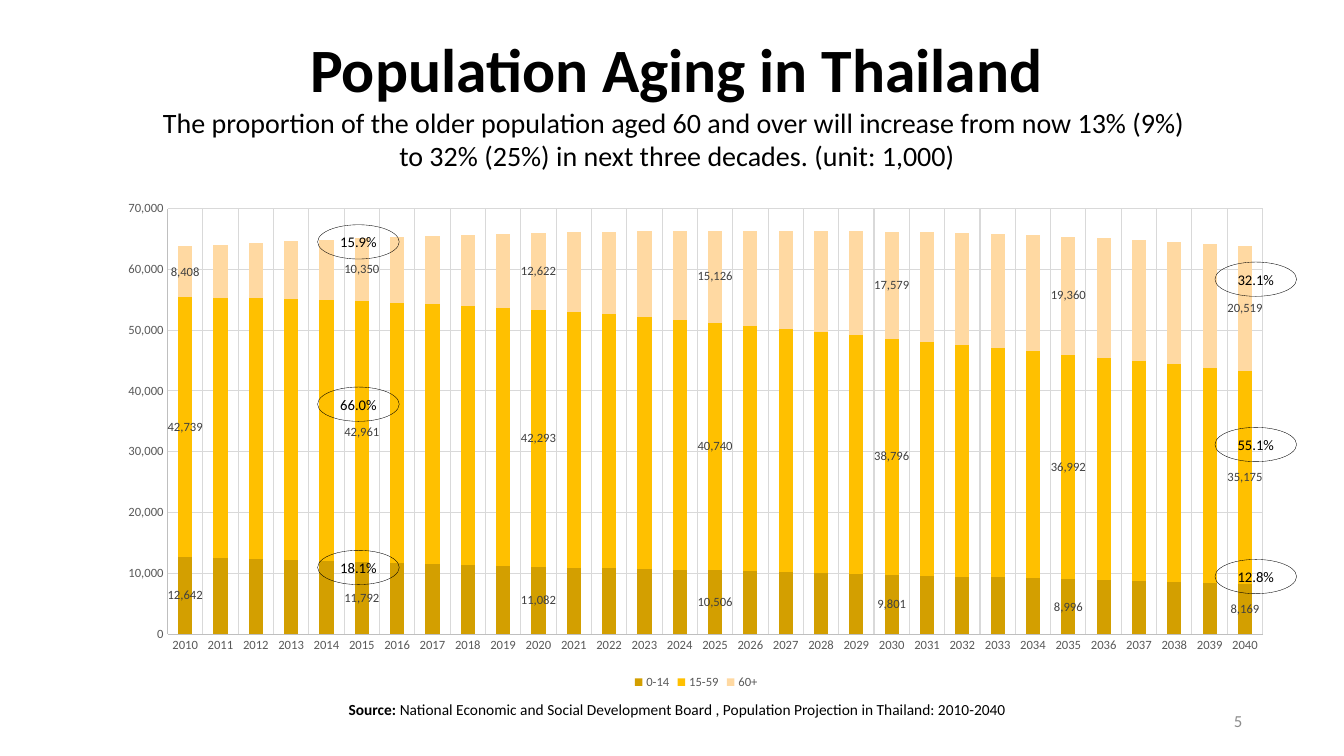
"""Build the slide on population aging in Thailand."""
from dataclasses import dataclass

from lxml import etree
from pptx import Presentation
from pptx import util as u
from pptx.chart.data import CategoryChartData
from pptx.dml.color import RGBColor
from pptx.enum import chart as ch, shapes, text


@dataclass(frozen=True)
class Theme:
    font: str = "Calibri"
    black: str = "000000"
    label: str = "404040"
    axis: str = "595959"
    page: str = "8C8C8C"
    line: str = "BFBFBF"
    grid: str = "D9D9D9"
    young: str = "D39F00"
    adult: str = "FFC000"
    older: str = "FFD9A2"
    head: float = 44
    sub: float = 20
    num: float = 12
    note: float = 11
    share: float = 10.5
    small: float = 9


theme = Theme()


def style(font, size, color, bold=False):
    font.name = theme.font
    font.size = u.Pt(size)
    font.bold = bold
    font.color.rgb = RGBColor.from_string(color)


def stroke(line, color, width):
    line.color.rgb = RGBColor.from_string(color)
    line.width = u.Pt(width)


deck = Presentation()
deck.slide_width = u.Inches(13.33)
deck.slide_height = u.Inches(7.5)
slide = deck.slides.add_slide(deck.slide_layouts[5])

title = slide.shapes.title
title.left, title.top = u.Inches(0.44), u.Inches(0.26)
title.width, title.height = u.Inches(12.55), u.Inches(1.63)
frame = title.text_frame
frame.text = (
    "Population Aging in Thailand\n"
    "The proportion of the older population aged 60 and over will increase from now 13% (9%) \n"
    "to 32% (25%) in next three decades. (unit: 1,000)"
)
frame.word_wrap = True
frame.auto_size = text.MSO_AUTO_SIZE.NONE
frame.vertical_anchor = text.MSO_ANCHOR.TOP
for row, para in enumerate(frame.paragraphs):
    para.alignment = text.PP_ALIGN.CENTER
    para.space_before = u.Pt(0)
    size = theme.sub if row else theme.head
    style(para.runs[0].font, size, theme.black, row == 0)

source = slide.shapes.add_textbox(u.Inches(0.58), u.Inches(6.8), u.Inches(12.28), u.Inches(0.47))
source.text_frame.word_wrap = True
source.text_frame.vertical_anchor = text.MSO_ANCHOR.MIDDLE
para = source.text_frame.paragraphs[0]
para.alignment = text.PP_ALIGN.CENTER
for words, bold in (
    ("Source: ", True),
    ("National Economic and Social Development Board , Population Projection in Thailand: 2010-2040", False),
):
    run = para.add_run()
    run.text = words
    style(run.font, theme.note, theme.black, bold)

page = slide.shapes.add_textbox(u.Inches(9.42), u.Inches(6.95), u.Inches(3), u.Inches(0.4))
page.text_frame.text = "5"
page.text_frame.word_wrap = True
page.text_frame.vertical_anchor = text.MSO_ANCHOR.MIDDLE
para = page.text_frame.paragraphs[0]
para.alignment = text.PP_ALIGN.RIGHT
style(para.runs[0].font, theme.num, theme.page)

groups = (
    ("0-14", theme.young, (
        12642, 12470, 12295, 12123, 11955, 11792, 11640, 11493, 11351, 11214, 11082,
        10955, 10834, 10717, 10608, 10506, 10374, 10238, 10098, 9951, 9801,
        9642, 9482, 9322, 9161, 8996, 8832, 8667, 8501, 8335, 8169)),
    ("15-59", theme.adult, (
        42739, 42861, 42941, 42982, 42989, 42961, 42899, 42803, 42669, 42502, 42293,
        42049, 41772, 41460, 41114, 40740, 40365, 39977, 39576, 39182, 38796,
        38424, 38065, 37710, 37354, 36992, 36623, 36250, 35878, 35519, 35175)),
    ("60+", theme.older, (
        8408, 8751, 9122, 9518, 9926, 10350, 10783, 11225, 11679, 12144, 12622,
        13109, 13607, 14108, 14616, 15126, 15640, 16149, 16650, 17129, 17579,
        17994, 18377, 18726, 19053, 19360, 19652, 19920, 20157, 20362, 20519)),
)
data = CategoryChartData(number_format="#,##0")
data.categories = [str(year) for year in range(2010, 2041)]
for name, color, counts in groups:
    data.add_series(name, counts)

chart = slide.shapes.add_chart(
    ch.XL_CHART_TYPE.COLUMN_STACKED,
    u.Inches(1.04), u.Inches(1.9), u.Inches(11.73), u.Inches(4.98), data,
).chart
chart.has_title = False
style(chart.font, 10, theme.black)
chart.has_legend = True
chart.legend.position = ch.XL_LEGEND_POSITION.BOTTOM
chart.legend.include_in_layout = False
style(chart.legend.font, theme.small, theme.axis)

for axis in (chart.category_axis, chart.value_axis):
    axis.major_tick_mark = axis.minor_tick_mark = ch.XL_TICK_MARK.NONE
    axis.has_major_gridlines = True
    stroke(axis.major_gridlines.format.line, theme.grid, 0.75)
    stroke(axis.format.line, theme.line, 0.75)
    style(axis.tick_labels.font, theme.small, theme.axis)
scale = chart.value_axis
scale.minimum_scale, scale.maximum_scale, scale.major_unit = 0, 70000, 10000
scale.tick_labels.number_format = "#,##0"
scale.tick_labels.number_format_is_linked = False

plot = chart.plots[0]
plot.gap_width = 150
plot.overlap = 100
plot.vary_by_categories = False
for series, (name, color, counts) in zip(plot.series, groups):
    series.format.fill.solid()
    series.format.fill.fore_color.rgb = RGBColor.from_string(color)
    series.invert_if_negative = False
    for spot in range(0, len(counts), 5):
        label = series.points[spot].data_label
        style(label.font, theme.small, theme.label)
        label.position = ch.XL_LABEL_POSITION.CENTER

space = "http://schemas.openxmlformats.org/drawingml/2006/chart"
area = plot._element.getparent()
for old in area.findall(f"{{{space}}}layout"):
    area.remove(old)
layout = etree.Element(f"{{{space}}}layout")
manual = etree.SubElement(layout, f"{{{space}}}manualLayout")
for tag, value in (
    ("layoutTarget", "inner"), ("xMode", "edge"), ("yMode", "edge"),
    ("x", "0.053"), ("y", "0.034"), ("w", "0.926"), ("h", "0.848"),
):
    etree.SubElement(manual, f"{{{space}}}{tag}", val=value)
area.insert(0, layout)

for left, marks in (
    (3.15, ((2.23, "15.9%"), (3.84, "66.0%"), (5.46, "18.1%"))),
    (12.05, ((2.6, "32.1%"), (4.24, "55.1%"), (5.55, "12.8%"))),
):
    for top, share in marks:
        oval = slide.shapes.add_shape(
            shapes.MSO_SHAPE.OVAL, u.Inches(left), u.Inches(top), u.Inches(0.81), u.Inches(0.34))
        oval.shadow.inherit = False
        oval.fill.background()
        stroke(oval.line, theme.black, 0.25)
        frame = oval.text_frame
        frame.text = share
        frame.word_wrap = False
        frame.vertical_anchor = text.MSO_ANCHOR.MIDDLE
        frame.paragraphs[0].alignment = text.PP_ALIGN.CENTER
        style(frame.paragraphs[0].runs[0].font, theme.share, theme.black)

deck.save("out.pptx")
